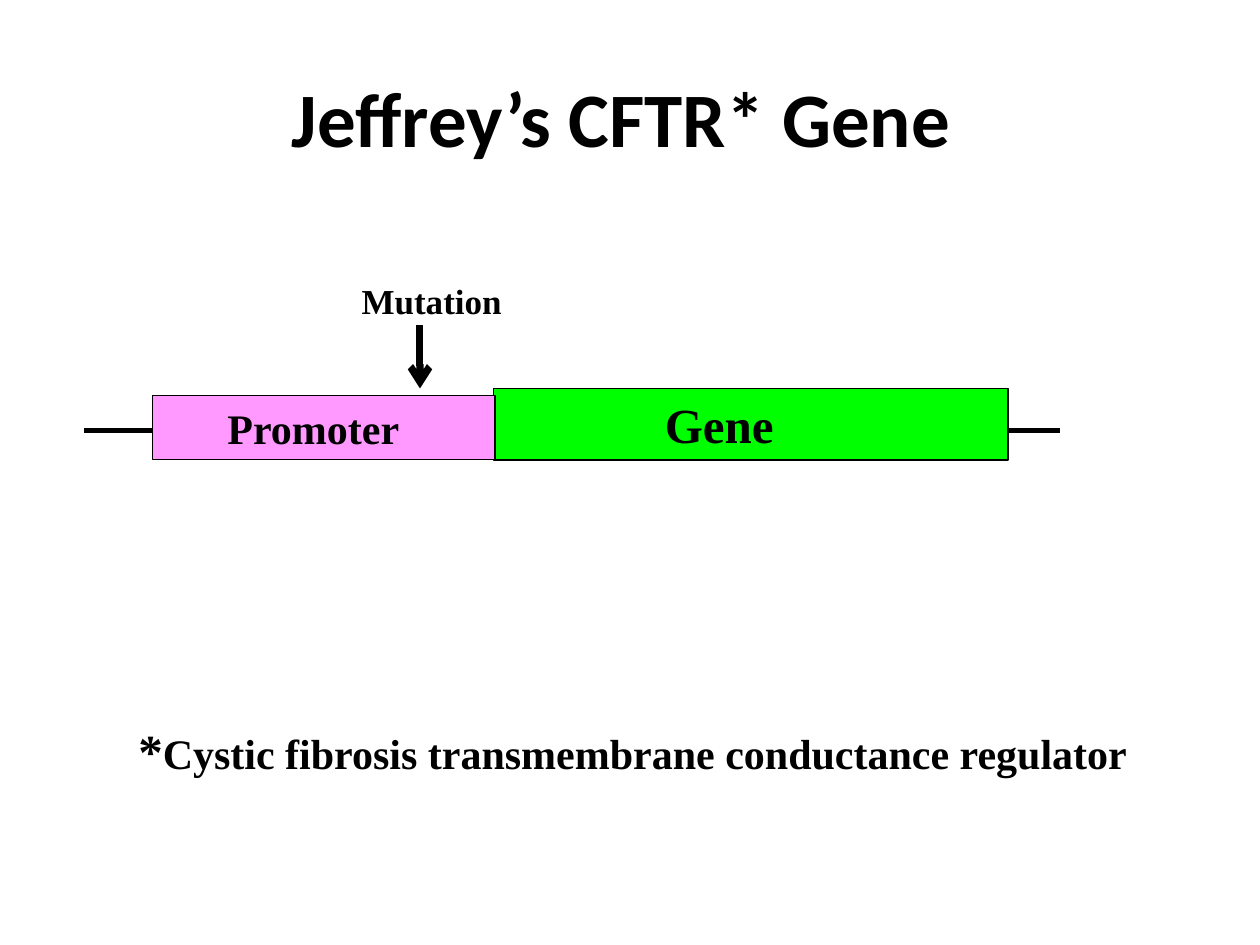
from pptx import Presentation
from pptx.dml.color import RGBColor
from pptx.enum.shapes import MSO_CONNECTOR, MSO_SHAPE
from pptx.enum.text import MSO_ANCHOR, PP_ALIGN
from pptx.oxml.ns import qn
from pptx.util import Pt
from lxml import etree

BLACK = RGBColor(0x00, 0x00, 0x00)
WHITE = RGBColor(0xFF, 0xFF, 0xFF)
GREEN = RGBColor(0x00, 0xFF, 0x00)
PINK = RGBColor(0xFF, 0x99, 0xFF)
HEADING_FONT = "Calibri"
LABEL_FONT = "Times New Roman"
STRAIGHT = MSO_CONNECTOR.STRAIGHT
RECTANGLE = MSO_SHAPE.RECTANGLE
MIDDLE = MSO_ANCHOR.MIDDLE
LEFT, CENTER = PP_ALIGN.LEFT, PP_ALIGN.CENTER
TITLE_ONLY = 5


def add_run(paragraph, text, size, font_name=LABEL_FONT):
    run = paragraph.add_run()
    run.text = text
    run.font.name = font_name
    run.font.size = Pt(size)
    run.font.bold = True
    run.font.color.rgb = BLACK


def set_title(slide, text):
    title = slide.shapes.title
    title.left, title.top, title.width, title.height = Pt(36), Pt(21.6), Pt(648), Pt(90)
    title.text_frame.vertical_anchor = MIDDLE
    paragraph = title.text_frame.paragraphs[0]
    paragraph.alignment = CENTER
    add_run(paragraph, text, 44, HEADING_FONT)


def add_line(slide, start, end, weight, arrow=False):
    line = slide.shapes.add_connector(STRAIGHT, *map(Pt, start + end))
    line.line.color.rgb = BLACK
    line.line.width = Pt(weight)
    if arrow:
        etree.SubElement(line.line._get_or_add_ln(), qn("a:tailEnd"), type="arrow")
    etree.SubElement(line._element.spPr, qn("a:effectLst"))


def add_region(slide, box, fill, outline, text, size, text_inset):
    """Add a stretch of the DNA whose label starts text_inset from its left edge."""
    region = slide.shapes.add_shape(RECTANGLE, *map(Pt, box))
    region.shadow.inherit = False
    region.fill.solid()
    region.fill.fore_color.rgb = fill
    region.line.color.rgb = BLACK
    region.line.width = Pt(outline)
    frame = region.text_frame
    frame.margin_left = Pt(text_inset)
    frame.vertical_anchor = MIDDLE
    frame.paragraphs[0].alignment = LEFT
    add_run(frame.paragraphs[0], text, size)


def add_label(slide, box, pieces):
    """Add one unwrapped line of text from (text, size) pieces."""
    frame = slide.shapes.add_textbox(*map(Pt, box)).text_frame
    frame.word_wrap = False
    for text, size in pieces:
        add_run(frame.paragraphs[0], text, size)


def main():
    deck = Presentation()
    deck.slide_width, deck.slide_height = Pt(720), Pt(540)
    slide = deck.slides.add_slide(deck.slide_layouts[TITLE_ONLY])
    slide.background.fill.solid()
    slide.background.fill.fore_color.rgb = WHITE

    set_title(slide, "Jeffrey’s CFTR* Gene ")
    add_line(slide, (48, 246), (606, 246), 3)
    add_region(slide, (282, 222, 294, 41), GREEN, 1, "Gene", 28, 98)
    add_region(slide, (87, 226, 196, 36.7), PINK, 0.75, "Promoter", 24, 43)
    add_label(slide, (72, 408, 590.4, 41), [
        ("*", 28),
        ("Cystic fibrosis transmembrane conductance regulator", 24),
    ])
    add_line(slide, (240, 186), (240, 222), 4, arrow=True)
    add_label(slide, (199.5, 156, 95, 31.5), [("Mutation", 20)])

    deck.save("out.pptx")


if __name__ == "__main__":
    main()
